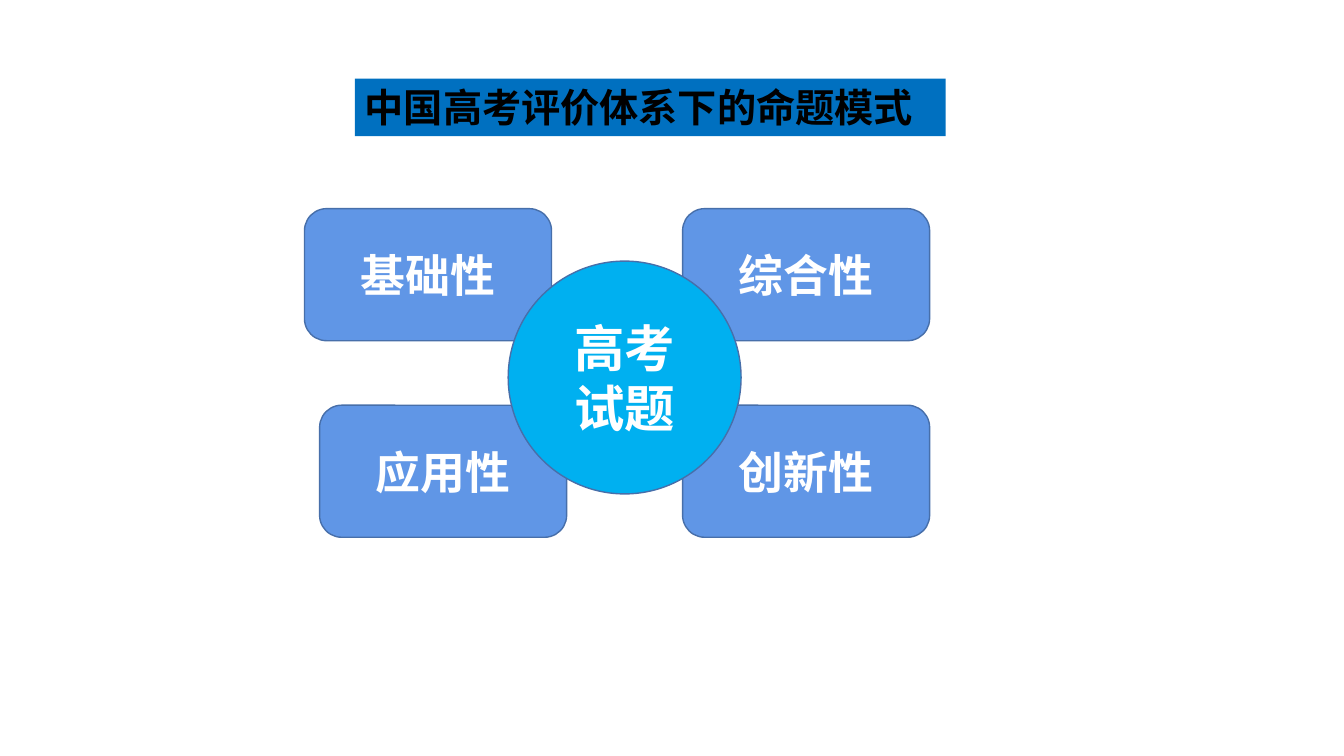
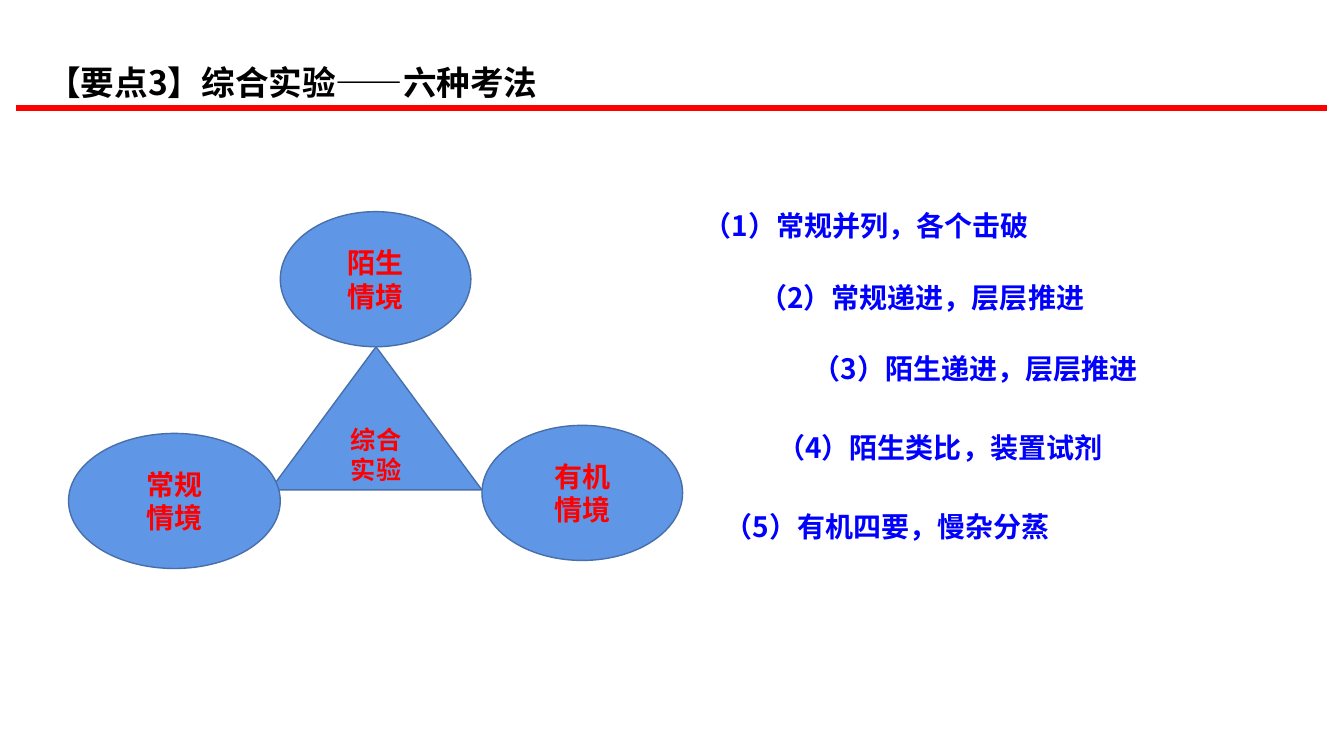
from dataclasses import dataclass

from lxml import etree
from pptx import Presentation
from pptx.dml.color import RGBColor
from pptx.enum.shapes import MSO_CONNECTOR, MSO_SHAPE
from pptx.enum.text import MSO_ANCHOR, PP_ALIGN
from pptx.oxml.ns import qn
from pptx.util import Inches, Pt

ROUNDED, ELLIPSE = MSO_SHAPE.ROUNDED_RECTANGLE, MSO_SHAPE.OVAL
TRIANGLE, RECTANGLE = MSO_SHAPE.ISOSCELES_TRIANGLE, MSO_SHAPE.RECTANGLE
STRAIGHT = MSO_CONNECTOR.STRAIGHT
LEFT, CENTER = PP_ALIGN.LEFT, PP_ALIGN.CENTER
TOP, MIDDLE = MSO_ANCHOR.TOP, MSO_ANCHOR.MIDDLE


@dataclass(frozen=True)
class Theme:
    soft_blue: str = "6096E6"
    outline: str = "476FAA"
    cyan: str = "00B0F0"
    band: str = "0070C0"
    red: str = "FF0000"
    blue: str = "0000FF"
    white: str = "FFFFFF"
    black: str = "000000"
    latin: str = "Arial"
    chinese: str = "Noto Sans CJK SC"
    hub: int = 36
    card: int = 32
    banner: int = 28
    title: int = 24
    body: int = 20
    small: int = 18


THEME = Theme()


def write_text(shape, text, size, color, font=THEME.chinese, align=LEFT,
               anchor=TOP, spacing=None):
    """Fill a shape with bold text, one paragraph per line."""
    frame = shape.text_frame
    frame.word_wrap = True
    frame.vertical_anchor = anchor
    for index, line in enumerate(text.split("\n")):
        para = frame.add_paragraph() if index else frame.paragraphs[0]
        para.alignment = align
        if spacing:
            para.line_spacing = spacing
        span = para.add_run()
        span.text = line
        span.font.size = Pt(size)
        span.font.bold = True
        span.font.name = font
        span.font.color.rgb = RGBColor.from_string(color)
        east_asian = etree.SubElement(span.font._element, qn("a:ea"))
        east_asian.set("typeface", THEME.chinese)


def add_figure(page, kind, place, fill, outline=THEME.outline):
    """Add a flat filled shape; place is left, top, width, height in inches."""
    shape = page.shapes.add_shape(kind, *map(Inches, place))
    shape.shadow.inherit = False
    shape.fill.solid()
    shape.fill.fore_color.rgb = RGBColor.from_string(fill)
    if outline:
        shape.line.color.rgb = RGBColor.from_string(outline)
        shape.line.width = Pt(1)
    else:
        shape.line.fill.background()
    return shape


deck = Presentation()
deck.slide_width, deck.slide_height = Inches(13.33), Inches(7.5)
blank = deck.slide_layouts[6]

# Slide 1: four qualities around the exam
page = deck.slides.add_slide(blank)
for label, left, top in [
    ("基础性", 3.02, 2.07),
    ("综合性", 6.77, 2.07),
    ("应用性", 3.17, 4.02),
    ("创新性", 6.77, 4.02),
]:
    card = add_figure(page, ROUNDED, (left, top, 2.45, 1.31), THEME.soft_blue)
    write_text(card, label, THEME.card, THEME.white, font=THEME.latin,
               align=CENTER, anchor=MIDDLE)

hub = add_figure(page, ELLIPSE, (5.04, 2.59, 2.31, 2.31), THEME.cyan)
write_text(hub, "高考试题", THEME.hub, THEME.white, font=THEME.latin,
           align=CENTER, anchor=MIDDLE)

banner = add_figure(page, RECTANGLE, (3.52, 0.78, 5.86, 0.57), THEME.band,
                    outline=None)
write_text(banner, "中国高考评价体系下的命题模式", THEME.banner, THEME.black,
           font=THEME.latin)

# Slide 2: title and rule
page = deck.slides.add_slide(blank)
rule = page.shapes.add_connector(STRAIGHT, Inches(0.16), Inches(1.07),
                                 Inches(13.16), Inches(1.07))
rule.line.color.rgb = RGBColor.from_string(THEME.red)
rule.line.width = Pt(4.5)
etree.SubElement(rule._element.spPr, qn("a:effectLst"))

title = page.shapes.add_textbox(Inches(0.37), Inches(0.36),
                                Inches(9.13), Inches(0.71))
write_text(title, "【要点3】综合实验——六种考法", THEME.title, THEME.black,
           spacing=1.5)

# Triangle with a context at each corner
for label, kind, place, size, font in [
    ("综合\n实验", TRIANGLE, (2.68, 3.44, 2.1, 1.42), THEME.small, THEME.latin),
    ("陌生\n情境", ELLIPSE, (2.78, 2.1, 1.89, 1.34), THEME.body, THEME.chinese),
    ("常规\n情境", ELLIPSE, (0.68, 4.3, 2.1, 1.34), THEME.body, THEME.chinese),
    ("有机\n情境", ELLIPSE, (4.78, 4.22, 1.99, 1.34), THEME.body, THEME.latin),
]:
    figure = add_figure(page, kind, place, THEME.soft_blue)
    write_text(figure, label, size, THEME.red, font=font, align=CENTER,
               anchor=MIDDLE)

# Question types, numbered in order
for number, (label, left, top) in enumerate([
    ("常规并列，各个击破", 6.88, 2.02),
    ("常规递进，层层推进", 7.43, 2.73),
    ("陌生递进，层层推进", 7.96, 3.44),
    ("陌生类比，装置试剂", 7.61, 4.22),
    ("有机四要，慢杂分蒸", 7.09, 5.01),
], start=1):
    box = page.shapes.add_textbox(Inches(left), Inches(top),
                                  Inches(4.8), Inches(0.44))
    write_text(box, f"（{number}）{label}", THEME.body, THEME.blue)

deck.save("out.pptx")
